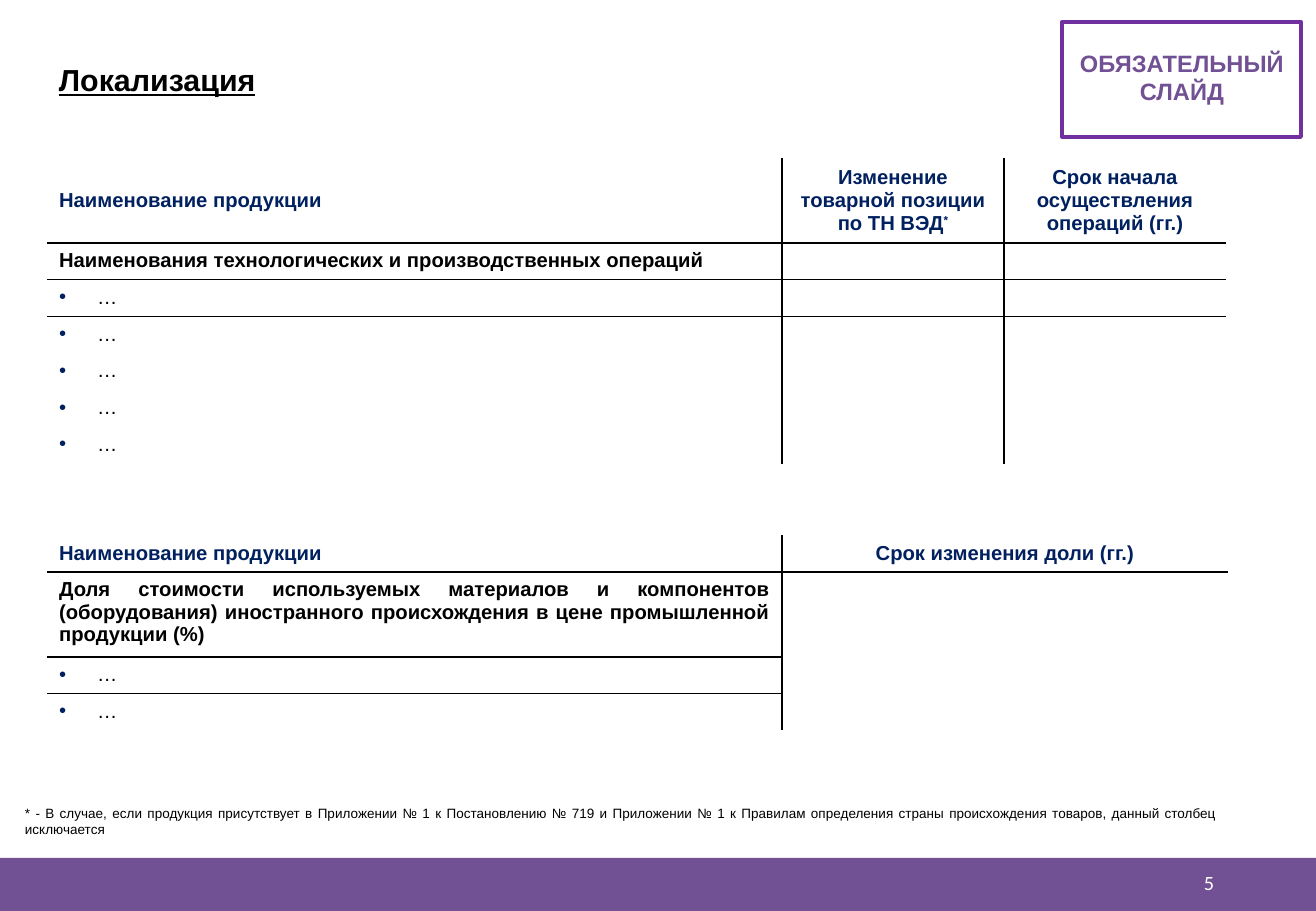
from dataclasses import dataclass

from lxml.etree import SubElement
from pptx import Presentation
from pptx.dml.color import RGBColor
from pptx.enum.shapes import MSO_SHAPE as Shape
from pptx.enum.text import MSO_ANCHOR as Anchor, PP_ALIGN as Align
from pptx.oxml.ns import qn
from pptx.util import Pt

SCALE = 7526  # EMU per px
NO_STYLE = "{2D5ABB26-0587-4C30-8999-92F81FD0307C}"


@dataclass(frozen=True)
class Theme:
    font: str = "Arial"
    number_font: str = "Calibri"
    black: str = "000000"
    white: str = "FFFFFF"
    navy: str = "002060"
    purple: str = "725094"
    frame: str = "7030A0"
    title: int = 18
    badge: int = 14
    table: int = 12
    number: int = 12
    note: int = 8
    border: float = 1
    frame_border: float = 2.25


THEME = Theme()
HEADER = dict(size=THEME.table, color=THEME.navy, bold=True)
SUBHEADER = dict(size=THEME.table, color=THEME.black, bold=True)
ITEM = dict(size=THEME.table, color=THEME.black, bullet=True)


def px(*lengths):
    return [round(length * SCALE) for length in lengths]


def add_bullet(paragraph):
    indent = px(38)[0]
    properties = paragraph._p.get_or_add_pPr()
    properties.set("marL", str(indent))
    properties.set("indent", str(-indent))
    color = SubElement(properties, qn("a:buClr"))
    SubElement(color, qn("a:srgbClr"), val=THEME.navy)
    SubElement(properties, qn("a:buFont"), typeface=THEME.font)
    SubElement(properties, qn("a:buChar"), char="•")


def write(frame, text, size, color, align=Align.LEFT, bullet=False, name=THEME.font, **font_format):
    """Fill a text frame, one paragraph a line; a final asterisk is raised."""
    for index, line in enumerate(text.split("\n")):
        paragraph = frame.paragraphs[0] if index == 0 else frame.add_paragraph()
        paragraph.alignment = align
        if bullet:
            add_bullet(paragraph)
        body = line.rstrip("*")
        for part in filter(None, (body, line[len(body):])):
            run = paragraph.add_run()
            run.text = part
            for key, value in dict(font_format, size=Pt(size), name=name).items():
                setattr(run.font, key, value)
            run.font.color.rgb = RGBColor.from_string(color)
            if part == "*":
                run._r.get_or_add_rPr().set("baseline", "30000")


def add_text(slide, box, text, size, color, anchor=Anchor.TOP, wrap=True, **text_format):
    frame = slide.shapes.add_textbox(*px(*box)).text_frame
    frame.word_wrap = wrap
    frame.vertical_anchor = anchor
    write(frame, text, size, color, **text_format)


def add_rectangle(slide, box, fill=None, line=None):
    shape = slide.shapes.add_shape(Shape.RECTANGLE, *px(*box))
    shape.shadow.inherit = False
    if fill:
        shape.fill.solid()
        shape.fill.fore_color.rgb = RGBColor.from_string(fill)
    else:
        shape.fill.background()
    if line:
        shape.line.color.rgb = RGBColor.from_string(line)
        shape.line.width = Pt(THEME.frame_border)
    else:
        shape.line.fill.background()


def set_borders(cell, sides):
    properties = cell._tc.get_or_add_tcPr()
    for side, shown in sides.items():
        if shown:
            line = SubElement(properties, qn(f"a:ln{side}"), w=str(Pt(THEME.border)))
            fill = SubElement(line, qn("a:solidFill"))
            SubElement(fill, qn("a:srgbClr"), val=THEME.black)
    cell.fill.background()


def add_operations_table(slide, left, top, widths, heights, texts, merge=None):
    """Rule the columns and the first two rows; merge gives the corners of a joined area."""
    table = slide.shapes.add_table(
        len(heights), len(widths), *px(left, top, sum(widths), sum(heights))).table
    table.first_row = table.horz_banding = False
    table._tbl.tblPr.find(qn("a:tableStyleId")).text = NO_STYLE
    for column, width in zip(table.columns, px(*widths)):
        column.width = width
    for row, height in zip(table.rows, px(*heights)):
        row.height = height
    if merge:
        first, last = merge
        table.cell(*first).merge(table.cell(*last))
    for row in range(len(heights)):
        for column in range(len(widths)):
            cell = table.cell(row, column)
            joined = cell.is_merge_origin or cell.is_spanned
            set_borders(cell, {
                "L": column > 0,
                "R": column < len(widths) - 1,
                "T": row in (1, 2) and not cell.is_spanned,
                "B": row < 2 and not joined,
            })
            if row == 0:
                cell.vertical_anchor = Anchor.MIDDLE
            if (row, column) in texts:
                text, text_format = texts[row, column]
                write(cell.text_frame, text, **text_format)
            else:
                SubElement(cell.text_frame.paragraphs[0]._p, qn("a:endParaRPr"),
                           sz=str(THEME.table * 100))


def add_badge(slide, left, top, width, height):
    add_rectangle(slide, (left, top, width, height), line=THEME.frame)
    add_text(slide, (left + 5, top + 21, width - 9, 69), "ОБЯЗАТЕЛЬНЫЙ\nСЛАЙД",
             THEME.badge, THEME.purple, wrap=False, align=Align.CENTER, bold=True)


def add_footer(slide, left, top, width, height):
    add_rectangle(slide, (left, top, width, height), fill=THEME.purple)
    add_text(slide, (left + 929, top, 297, 49), "5", THEME.number, THEME.white,
             anchor=Anchor.MIDDLE, align=Align.RIGHT, name=THEME.number_font)


def add_localization_slide(presentation):
    slide = presentation.slides.add_slide(presentation.slide_layouts[6])
    add_footer(slide, 0, 858, 1316, 53)
    add_text(slide, (47, 55, 908, 49), "Локализация", THEME.title, THEME.black,
             bold=True, underline=True)
    centered = dict(HEADER, align=Align.CENTER)
    add_operations_table(
        slide, 47, 158, [735, 222, 222], [85, 36, 37, 36, 37, 36, 37],
        {(0, 0): ("Наименование продукции", HEADER),
         (0, 1): ("Изменение товарной позиции\nпо ТН ВЭД*", centered),
         (0, 2): ("Срок начала осуществления операций (гг.)", centered),
         (1, 0): ("Наименования технологических и производственных операций", SUBHEADER),
         **{(row, 0): ("…", ITEM) for row in range(2, 7)}})
    add_operations_table(
        slide, 47, 535, [735, 446], [37, 85, 36, 36],
        {(0, 0): ("Наименование продукции", HEADER),
         (0, 1): ("Срок изменения доли (гг.)", centered),
         (1, 0): ("Доля стоимости используемых материалов и компонентов (оборудования) "
                  "иностранного происхождения в цене промышленной продукции (%)",
                  dict(SUBHEADER, align=Align.JUSTIFY)),
         **{(row, 0): ("…", ITEM) for row in range(2, 4)}},
        merge=((1, 1), (3, 1)))
    add_text(slide, (13, 799, 1217, 45),
             "* - В случае, если продукция присутствует в Приложении № 1 к Постановлению № 719 "
             "и Приложении № 1 к Правилам определения страны происхождения товаров, "
             "данный столбец исключается",
             THEME.note, THEME.black, align=Align.JUSTIFY)
    add_badge(slide, 1062, 22, 239, 115)


def main():
    presentation = Presentation()
    presentation.slide_width, presentation.slide_height = px(1316, 911)
    add_localization_slide(presentation)
    presentation.save("out.pptx")


if __name__ == "__main__":
    main()
